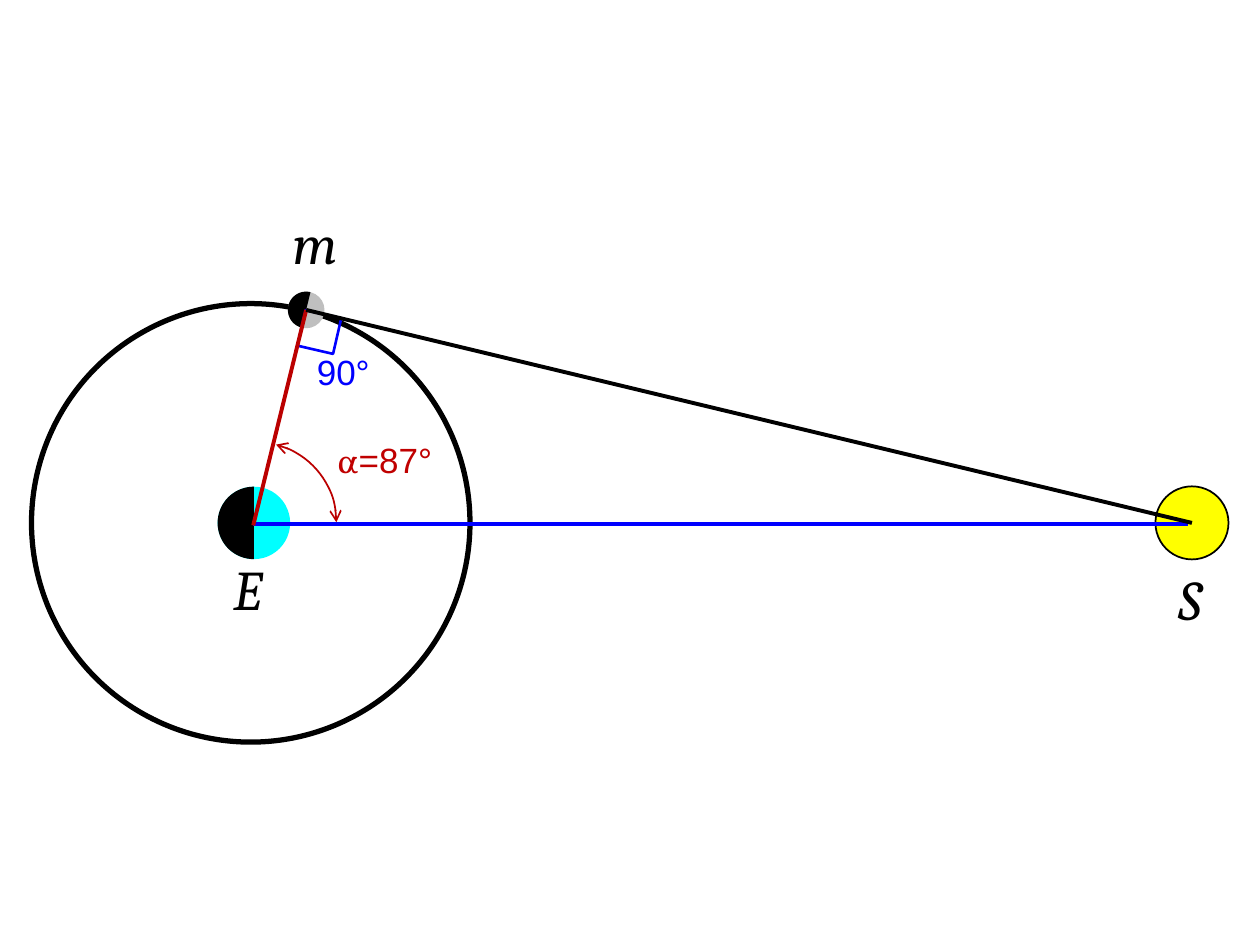
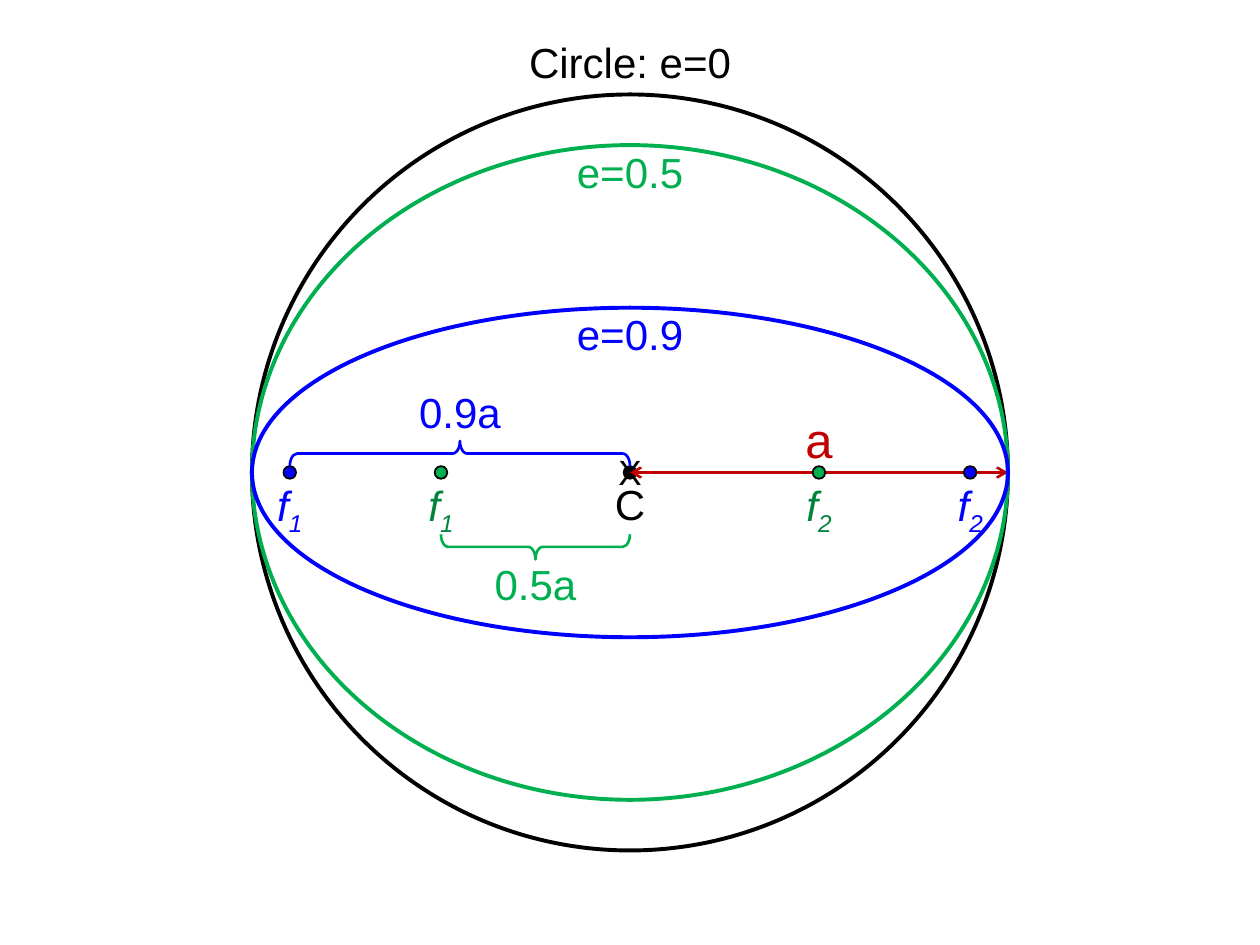
from dataclasses import dataclass
from math import cos, radians, sin, sqrt

from lxml.etree import SubElement
from pptx import Presentation
from pptx.dml.color import RGBColor
from pptx.enum.shapes import MSO_CONNECTOR, MSO_SHAPE
from pptx.enum.text import MSO_AUTO_SIZE, PP_ALIGN
from pptx.oxml.ns import qn
from pptx.util import Inches, Pt

HUES = {
    "black": "000000",
    "blue": "0000FF",
    "cyan": "00FFFF",
    "gray": "BFBFBF",
    "yellow": "FFFF00",
    "red": "C00000",
    "brick": "BB0000",
    "green": "00B050",
    "pine": "00843C",
}


@dataclass(frozen=True)
class Box:
    left: int
    top: int
    width: int
    cols: int

    def span(self, cells):
        return round(self.width * cells / self.cols)

    def spot(self, x, y):
        return self.left + self.span(x), self.top + self.span(y)


def tint(hue):
    return RGBColor.from_string(HUES[hue])


def paint(shape, fill=None, line=None, weight=1):
    shape.shadow.inherit = False
    if fill:
        shape.fill.solid()
        shape.fill.fore_color.rgb = tint(fill)
    else:
        shape.fill.background()
    if line:
        shape.line.color.rgb = tint(line)
        shape.line.width = Pt(weight)
    else:
        shape.line.fill.background()


def point(shape):
    edge = shape.line._get_or_add_ln()
    for end in ("a:headEnd", "a:tailEnd"):
        SubElement(edge, qn(end)).set("type", "arrow")


def draw(slide, box, kind, mid, wide, high, turn=0, **look):
    x, y = mid
    place = box.spot(x - wide / 2, y - high / 2)
    shape = slide.shapes.add_shape(kind, *place, box.span(wide), box.span(high))
    shape.rotation = turn
    paint(shape, **look)
    return shape


def disc(slide, box, mid, size, **look):
    return draw(slide, box, MSO_SHAPE.OVAL, mid, size, size, **look)


def shade(slide, box, mid, size, tilt=0):
    x, y = mid
    turns = [radians(tilt - step) for step in range(0, 181, 5)]
    rim = [box.spot(x + size / 2 * sin(t), y - size / 2 * cos(t)) for t in turns]
    path = slide.shapes.build_freeform(*rim[0])
    path.add_line_segments(rim[1:], close=True)
    paint(path.convert_to_shape(), fill="black")


def join(slide, box, start, end, hue, weight=2.25):
    line = slide.shapes.add_connector(
        MSO_CONNECTOR.STRAIGHT, *box.spot(*start), *box.spot(*end))
    line.line.color.rgb = tint(hue)
    line.line.width = Pt(weight)
    SubElement(line._element.spPr, qn("a:effectLst"))
    return line


def label(slide, box, mid, top, wide, text, hue, size=24, face="Arial",
          slant=False, lead=1.2, sub="", first=""):
    high = Inches(0.1) + Pt(size * lead)
    place = box.spot(mid - wide / 2, top)
    frame = slide.shapes.add_textbox(*place, box.span(wide), high).text_frame
    frame.word_wrap = False
    frame.auto_size = MSO_AUTO_SIZE.SHAPE_TO_FIT_TEXT
    para = frame.paragraphs[0]
    para.alignment = PP_ALIGN.CENTER
    font = para.font
    font.name, font.size, font.italic = face, Pt(size), slant
    font.color.rgb = tint(hue)
    if first:
        run = para.add_run()
        run.text = first
        run.font.name = "Vollkorn"
    para.add_run().text = text
    if sub:
        run = para.add_run()
        run.text = sub
        run._r.get_or_add_rPr().set("baseline", "-25000")


def moon_phase(slide, box):
    earth, moon, sun = (20.15, 41.5), (24.3, 24.6), (94.6, 41.5)
    disc(slide, box, earth, 5.75, fill="cyan")
    shade(slide, box, earth, 5.75)
    disc(slide, box, (19.9, 41.5), 34.8, line="black", weight=3)
    disc(slide, box, moon, 2.9, fill="gray")
    shade(slide, box, moon, 2.9, 13.7)
    disc(slide, box, sun, 5.8, fill="yellow", line="black")
    join(slide, box, (20.1, 41.6), (94.3, 41.6), "blue")

    label(slide, box, 30.55, 34.3, 11.1, "=87°", "red", 20, lead=1.44, first="α")
    for text, mid, top, wide in (("E", 19.65, 43.5, 5.5), ("m", 25, 16.1, 6.8),
                                 ("S", 94.45, 44.3, 4.9)):
        label(slide, box, mid, top, wide, text, "black", 32, "Cambria", True, 1.44)
    label(slide, box, 27.25, 27.3, 7.3, "90°", "blue", 20, lead=1.44)

    draw(slide, box, MSO_SHAPE.RECTANGLE, (25.35, 26.35), 2.9, 2.9, 13,
         line="blue", weight=1.5)
    join(slide, box, (20.1, 41.7), moon, "brick")
    join(slide, box, moon, sun, "black")
    arc = draw(slide, box, MSO_SHAPE.ARC, (20.35, 41.45), 12.7, 12.7, line="brick")
    arc.adjustments[0] = 284.22 * 0.6
    point(arc)


def focus_pair(slide, box, ratio, hue, ink, brace, turn, top):
    half = box.cols / 2
    reach = ratio * half
    for side, sub in ((-1, "1"), (1, "2")):
        x = half + side * reach
        disc(slide, box, (x, half), 1, fill=hue, line="black")
        label(slide, box, x, half + 0.1, 4.9, "f", ink, slant=True, sub=sub)
    mid = half - reach / 2
    curl = draw(slide, box, MSO_SHAPE.LEFT_BRACE, (mid, brace), 2, reach, turn,
                line=hue, weight=1.5)
    curl.adjustments[0] = 0.29
    label(slide, box, mid, top, 8.5, f"{ratio}a", hue)


def oval_set(slide, box):
    full = box.cols
    half = full / 2
    core = (half, half)
    disc(slide, box, core, 1, fill="black", line="black")
    label(slide, box, half, 27.8, 3.9, "X", "black", 20)
    point(join(slide, box, core, (full, half), "red", 1.5))
    for ratio, hue, text, top, wide in (
            (0, "black", "Circle: e=0", -5.1, 18.1),
            (0.5, "green", "e=0.5", 3.6, 10.5),
            (0.9, "blue", "e=0.9", 16.5, 10.5)):
        draw(slide, box, MSO_SHAPE.OVAL, core, full, full * sqrt(1 - ratio ** 2),
             line=hue, weight=2.25)
        label(slide, box, half, top, wide, text, hue)
    label(slide, box, half * 1.5, 24.5, 4.2, "a", "red", 28)
    label(slide, box, half, half, 4.5, "C", "black")
    focus_pair(slide, box, 0.5, "green", "pine", 35.9, 270, 36.3)
    focus_pair(slide, box, 0.9, "blue", "blue", 28.5, 90, 22.7)


def main():
    deck = Presentation()
    deck.slide_width, deck.slide_height = Inches(10), Inches(7.5)
    blank = deck.slide_layouts[6]
    wide, high = deck.slide_width, deck.slide_height
    moon_phase(deck.slides.add_slide(blank), Box(0, 0, wide, 100))
    oval_set(deck.slides.add_slide(blank),
             Box(round(wide * 0.2), round(high * 0.1), round(wide * 0.6), 60))
    deck.save("out.pptx")


if __name__ == "__main__":
    main()
